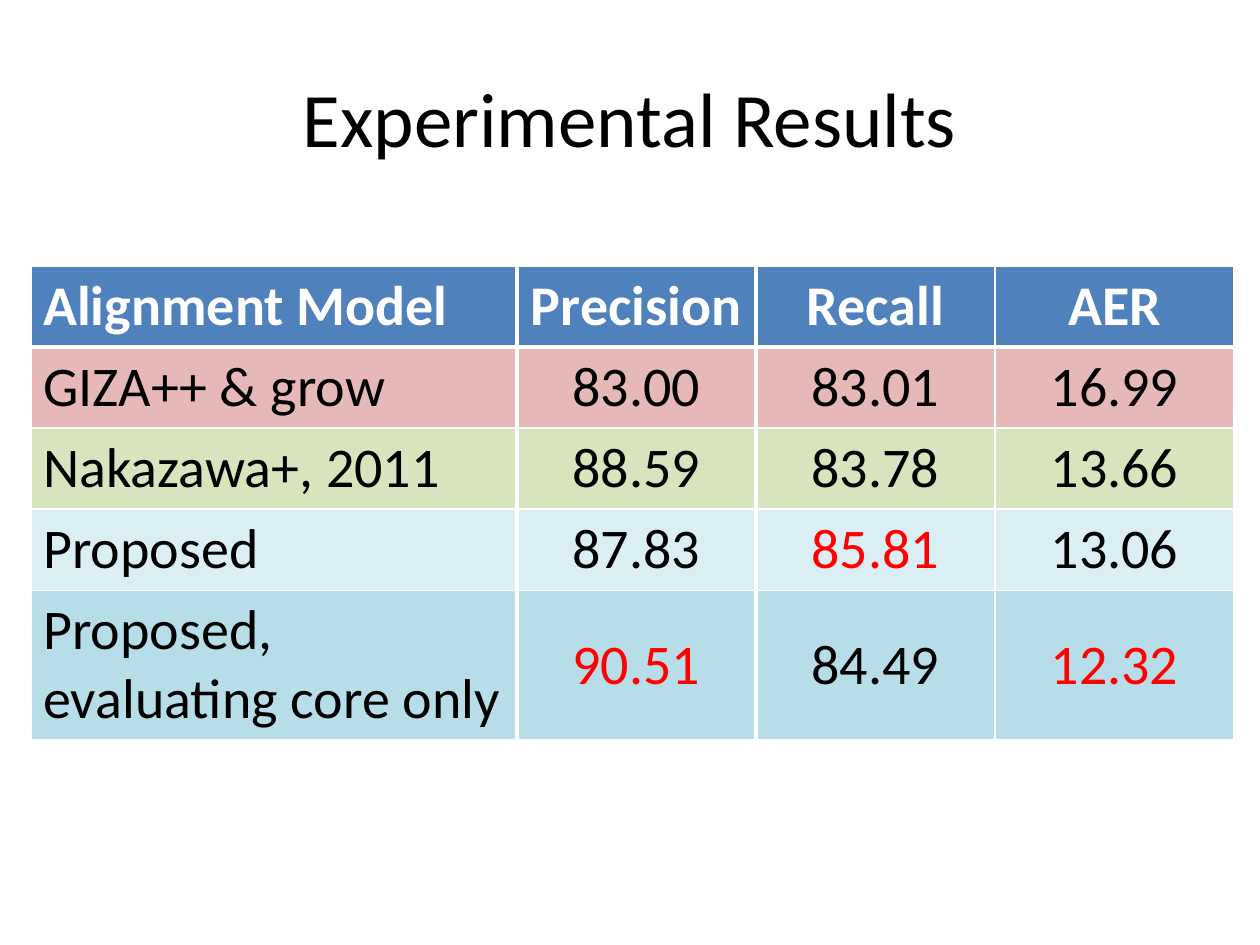
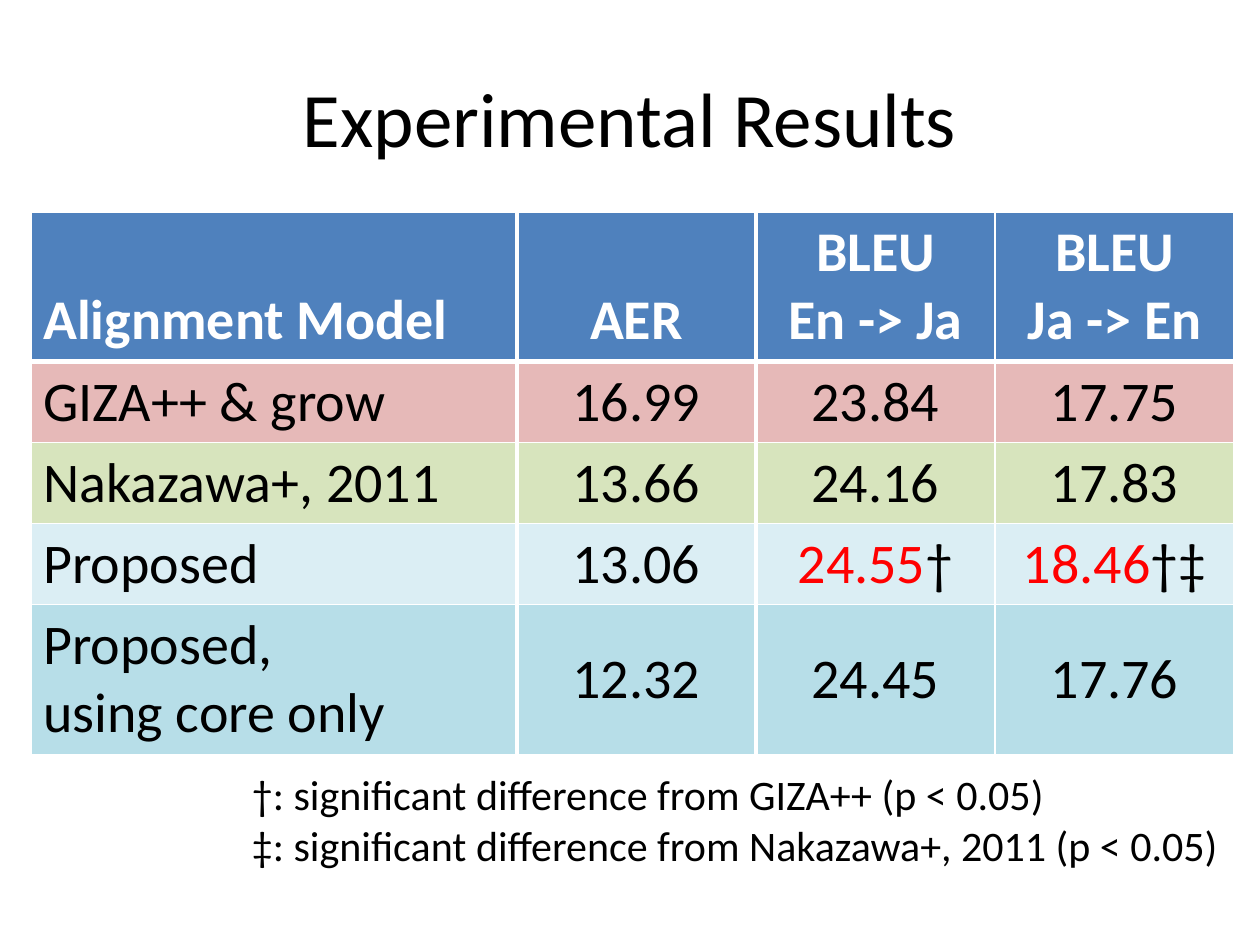
from lxml import etree
from pptx import Presentation, util as u
from pptx.dml.color import RGBColor
from pptx.enum import text
from pptx.oxml.ns import qn

# Content: text between asterisks is a best score
TITLE = "Experimental Results"
RESULTS = [
    {"top": 5.36, "notes": [], "rows": [
        ["Alignment Model", "Precision", "Recall", "AER"],
        ["GIZA++ & grow", "83.00", "83.01", "16.99"],
        ["Nakazawa+, 2011", "88.59", "83.78", "13.66"],
        ["Proposed", "87.83", "*85.81*", "13.06"],
        ["Proposed,\nevaluating core only", "*90.51*", "84.49", "*12.32*"],
    ]},
    {"top": 4.27, "rows": [
        ["Alignment Model", "AER", "BLEU\nEn -> Ja", "BLEU\nJa -> En"],
        ["GIZA++ & grow", "16.99", "23.84", "17.75"],
        ["Nakazawa+, 2011", "13.66", "24.16", "17.83"],
        ["Proposed", "13.06", "*24.55*†", "*18.46*†‡"],
        ["Proposed,\nusing core only", "12.32", "24.45", "17.76"],
    ], "notes": [
        "†: significant difference from GIZA++ (p < 0.05)",
        "‡: significant difference from Nakazawa+, 2011 (p < 0.05)",
    ]},
]

# Shared style
FONT = "Calibri"
BLACK = RGBColor(0x00, 0x00, 0x00)
WHITE = RGBColor(0xFF, 0xFF, 0xFF)
RED = RGBColor(0xFF, 0x00, 0x00)
ROW_FILLS = [
    RGBColor(0x4F, 0x81, 0xBD), RGBColor(0xE6, 0xB9, 0xB8),
    RGBColor(0xD7, 0xE4, 0xBD), RGBColor(0xDB, 0xEE, 0xF4),
    RGBColor(0xB7, 0xDE, 0xE8),
]
TABLE_LEFT = 0.62
COL_WIDTHS = [9.8, 4.82, 4.82, 4.82]
ROW_HEIGHTS = {1: 1.63, 2: 2.98}  # by number of text lines
THIN, THICK = 1, 3


def add_run(p, words, size, color, bold=False):
    r = p.add_run()
    r.text = words
    r.font.color.rgb = color
    for name, value in {"name": FONT, "size": u.Pt(size), "bold": bold}.items():
        setattr(r.font, name, value)


def write_lines(tf, lines, size, color, bold=False, align=text.PP_ALIGN.LEFT):
    for i, line in enumerate(lines):
        p = tf.paragraphs[0] if i == 0 else tf.add_paragraph()
        p.alignment = align
        for j, part in enumerate(line.split("*")):
            if part:
                add_run(p, part, size, RED if j % 2 else color, bold)


def set_borders(cell, widths):
    tc_pr = cell._tc.get_or_add_tcPr()
    for side, width in widths.items():
        ln = etree.SubElement(tc_pr, qn(f"a:ln{side}"), w=str(u.Pt(width)))
        fill = etree.SubElement(ln, qn("a:solidFill"))
        etree.SubElement(fill, qn("a:srgbClr"), val=str(WHITE))


def add_title(s):
    title = s.shapes.title
    box = {"left": 1.27, "top": 0.76, "width": 22.86, "height": 3.18}
    for name, value in box.items():
        setattr(title, name, u.Cm(value))
    title.text_frame.vertical_anchor = text.MSO_ANCHOR.MIDDLE
    write_lines(title.text_frame, [TITLE], 44, BLACK, align=text.PP_ALIGN.CENTER)


def add_results(s, rows, top):
    heights = [ROW_HEIGHTS[1 + max(c.count("\n") for c in row)] for row in rows]
    frame = s.shapes.add_table(
        len(rows), len(COL_WIDTHS), u.Cm(TABLE_LEFT), u.Cm(top),
        u.Cm(sum(COL_WIDTHS)), u.Cm(sum(heights)))
    table = frame.table
    for column, width in zip(table.columns, COL_WIDTHS):
        column.width = u.Cm(width)
    for i, row in enumerate(rows):
        table.rows[i].height = u.Cm(heights[i])
        header = i == 0
        for j, words in enumerate(row):
            cell = table.cell(i, j)
            # Thick rules below the header and around the second column
            set_borders(cell, {
                "L": THICK if j in (1, 2) else THIN,
                "R": THICK if j in (0, 1) else THIN,
                "T": THICK if i == 1 else THIN,
                "B": THICK if header else THIN,
            })
            cell.fill.solid()
            cell.fill.fore_color.rgb = ROW_FILLS[i]
            cell.vertical_anchor = (text.MSO_ANCHOR.BOTTOM if header
                                    else text.MSO_ANCHOR.MIDDLE)
            write_lines(cell.text_frame, words.split("\n"), 32,
                        WHITE if header else BLACK, header,
                        text.PP_ALIGN.CENTER if j else text.PP_ALIGN.LEFT)


def add_notes(s, notes):
    sp = s.shapes.add_textbox(u.Cm(4.83), u.Cm(15.37), u.Cm(20.45), u.Cm(2.31))
    sp.text_frame.word_wrap = False
    write_lines(sp.text_frame, notes, 24, BLACK)


def main():
    prs = Presentation()
    prs.slide_width, prs.slide_height = u.Cm(25.4), u.Cm(19.05)
    for result in RESULTS:
        s = prs.slides.add_slide(prs.slide_layouts[5])
        add_title(s)
        add_results(s, result["rows"], result["top"])
        if result["notes"]:
            add_notes(s, result["notes"])
    prs.save("out.pptx")


if __name__ == "__main__":
    main()
